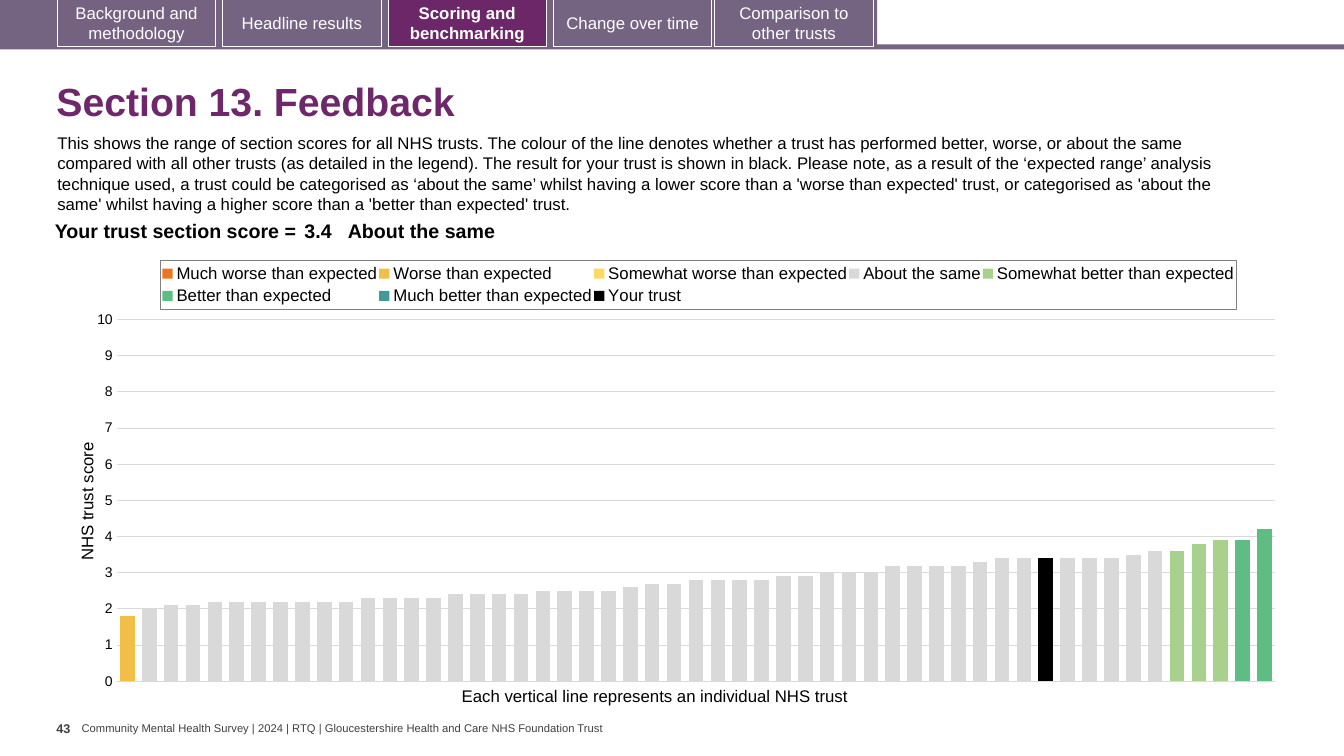
from copy import deepcopy

from lxml import etree
from pptx import Presentation
from pptx import util as u
from pptx.chart.data import CategoryChartData
from pptx.dml.color import RGBColor
from pptx.enum import chart as ch, shapes, text
from pptx.oxml.ns import qn

BAR = RGBColor(0x75, 0x63, 0x82)
TAB = RGBColor(0x74, 0x62, 0x80)
ACTIVE = RGBColor(0x6B, 0x27, 0x68)
PURPLE = RGBColor(0x6D, 0x27, 0x6A)
GREY = RGBColor(0x40, 0x40, 0x40)
GRID = RGBColor(0xD9, 0xD9, 0xD9)
FRAME = RGBColor(0x80, 0x80, 0x80)
WHITE = RGBColor(0xFF, 0xFF, 0xFF)
BLACK = RGBColor(0, 0, 0)

TRUSTS = 53
SAME = [2, 2.1, 2.1] + [2.2] * 7 + [2.3] * 4 + [2.4] * 4 + [2.5] * 4 + [
    2.6, 2.7, 2.7] + [2.8] * 4 + [2.9] * 2 + [3] * 3 + [3.2] * 4 + [
    3.3] + [3.4] * 6 + [3.5, 3.6]
# Series name, number of trusts before it, scores, colour
SERIES = [
    ("Much worse than expected", 0, [], RGBColor(0xE8, 0x77, 0x22)),
    ("Worse than expected", 0, [1.8], RGBColor(0xF1, 0xBE, 0x48)),
    ("Somewhat worse than expected", 0, [], RGBColor(0xFF, 0xD9, 0x66)),
    ("About the same", 1, SAME, GRID),
    ("Somewhat better than expected", 48, [3.6, 3.8, 3.9], RGBColor(0xA9, 0xD1, 0x8E)),
    ("Better than expected", 51, [3.9, 4.2], RGBColor(0x5F, 0xBD, 0x83)),
    ("Much better than expected", 0, [], RGBColor(0x41, 0x99, 0x99)),
    ("Your trust", 42, [3.4], BLACK),
]
INTRO = (
    "This shows the range of section scores for all NHS trusts. The colour of the line "
    "denotes whether a trust has performed better, worse, or about the same compared with "
    "all other trusts (as detailed in the legend). The result for your trust is shown in "
    "black. Please note, as a result of the ‘expected range’ analysis technique used, a "
    "trust could be categorised as ‘about the same’ whilst having a lower score than a "
    "'worse than expected' trust, or categorised as 'about the same' whilst having a higher "
    "score than a 'better than expected' trust.")


def inches(*lengths):
    return [u.Inches(v) for v in lengths]


def style(font, size, color=BLACK, bold=False):
    font.name, font.size, font.bold = "Arial", u.Pt(size), bold
    font.color.rgb = color


def write(tf, words, size, color=BLACK, bold=False, align=text.PP_ALIGN.LEFT):
    p = tf.paragraphs[0]
    p.alignment = align
    r = p.add_run()
    r.text = words
    style(r.font, size, color, bold)
    return p


def margins(frame, side, top):
    frame.margin_left = frame.margin_right = u.Inches(side)
    frame.margin_top = frame.margin_bottom = u.Inches(top)


def label(s, box, words, size, color=BLACK, bold=False, wrap=True, insets=(0.1, 0.05)):
    tf = s.shapes.add_textbox(*inches(*box)).text_frame
    tf.word_wrap = wrap
    margins(tf, *insets)
    write(tf, words, size, color, bold)
    return tf


def rect(s, box, fill=None, line=None):
    sp = s.shapes.add_shape(shapes.MSO_SHAPE.RECTANGLE, *inches(*box))
    sp.shadow.inherit = False
    if fill is None:
        sp.fill.background()
    else:
        sp.fill.solid()
        sp.fill.fore_color.rgb = fill
    if line is None:
        sp.line.fill.background()
    else:
        sp.line.color.rgb = line
        sp.line.width = u.Pt(0.75)
    return sp


def navigation(s, left, width, height):
    rect(s, (0, height - 0.05, 13.33, 0.05), BAR)
    rect(s, (0, 0, 8.7, 0.47), BAR)
    pitch = 1.64
    tabs = [("Background and methodology", TAB), ("Headline results", None),
            ("Scoring and benchmarking", ACTIVE), ("Change over time", BAR),
            ("Comparison to other trusts", BAR)]
    for i, (name, fill) in enumerate(tabs):
        x = left + i * pitch - (0.04 if i == 4 else 0)
        active = fill == ACTIVE
        sp = rect(s, (x, -0.01, width, 0.47), fill, WHITE)
        sp.text_frame.word_wrap = True
        sp.text_frame.vertical_anchor = text.MSO_ANCHOR.MIDDLE
        write(sp.text_frame, name, 12, WHITE, active, text.PP_ALIGN.CENTER)


def heading(s, box):
    title = s.shapes.title
    title.left, title.top, title.width, title.height = inches(*box)
    tf = title.text_frame
    tf.auto_size = text.MSO_AUTO_SIZE.NONE
    tf.vertical_anchor = text.MSO_ANCHOR.MIDDLE
    write(tf, "Section 13. Feedback", 28, PURPLE, True).line_spacing = 0.9


def score_row(s, left, top):
    widths = (2.63, 0.47, 8.59)
    frame = s.shapes.add_table(1, 3, *inches(left, top, sum(widths), 0.31))
    table = frame.table
    table.first_row = table.horz_banding = False
    words = ("Your trust section score =", "3.4", "About the same")
    for i, cell in enumerate(table.rows[0].cells):
        table.columns[i].width = u.Inches(widths[i])
        cell.fill.background()
        margins(cell, 0 if i == 2 else 0.04, 0.04)
        align = text.PP_ALIGN.LEFT if i else text.PP_ALIGN.RIGHT
        write(cell.text_frame, words[i], 14, BLACK, True, align)
        # Hide the cell borders
        for n, edge in enumerate(("a:lnL", "a:lnR", "a:lnT", "a:lnB")):
            ln = etree.Element(qn(edge), w="0")
            etree.SubElement(ln, qn("a:noFill"))
            cell._tc.get_or_add_tcPr().insert(n, ln)


def place(element, index, inner=False, **shares):
    """Give a chart part a manual layout, as shares of the chart."""
    for old in element.findall(qn("c:layout")):
        element.remove(old)
    layout = etree.Element(qn("c:layout"))
    manual = etree.SubElement(layout, qn("c:manualLayout"))
    if inner:
        etree.SubElement(manual, qn("c:layoutTarget"), val="inner")
    for key in ("x", "y"):
        etree.SubElement(manual, qn(f"c:{key}Mode"), val="edge")
    for key, share in shares.items():
        etree.SubElement(manual, qn(f"c:{key}"), val=str(share))
    element.insert(index, layout)


def second_axis(plot_area):
    """Move the last series to its own pair of axes on the right."""
    bars = plot_area.find(qn("c:barChart"))
    cat, val = plot_area.find(qn("c:catAx")), plot_area.find(qn("c:valAx"))
    bars2, cat2, val2 = deepcopy(bars), deepcopy(cat), deepcopy(val)
    bars.remove(bars.findall(qn("c:ser"))[-1])
    for ser in bars2.findall(qn("c:ser"))[:-1]:
        bars2.remove(ser)
    bars.addnext(bars2)
    val.addnext(val2)
    val2.addnext(cat2)
    ids = {cat.find(qn("c:axId")).get("val"): "5001", val.find(qn("c:axId")).get("val"): "5002"}
    for part in (bars2, cat2, val2):
        for ref in part.findall(qn("c:axId")) + part.findall(qn("c:crossAx")):
            ref.set("val", ids[ref.get("val")])
    for tag in ("c:majorGridlines", "c:title"):
        val2.remove(val2.find(qn(tag)))
    val2.find(qn("c:axPos")).set("val", "r")
    val2.find(qn("c:tickLblPos")).set("val", "none")
    val2.find(qn("c:crosses")).set("val", "max")


def score_chart(s, box):
    data = CategoryChartData()
    data.categories = [str(n + 1) for n in range(TRUSTS)]
    for name, before, scores, _ in SERIES:
        data.add_series(name, [None] * before + scores + [None] * (TRUSTS - before - len(scores)))
    chart = s.shapes.add_chart(ch.XL_CHART_TYPE.COLUMN_CLUSTERED, *inches(*box), data).chart
    style(chart.font, 10)
    chart.has_title = False
    plot = chart.plots[0]
    plot.gap_width, plot.overlap, plot.vary_by_categories = 50, 100, False
    for series, (*_, color) in zip(plot.series, SERIES):
        series.format.fill.solid()
        series.format.fill.fore_color.rgb = color
    # Axes
    chart.category_axis.visible = False
    axis = chart.value_axis
    axis.minimum_scale, axis.maximum_scale, axis.major_unit = 0, 10, 1
    axis.major_tick_mark = axis.minor_tick_mark = ch.XL_TICK_MARK.NONE
    axis.tick_label_position = ch.XL_TICK_LABEL_POSITION.NEXT_TO_AXIS
    axis.format.line.fill.background()
    axis.major_gridlines.format.line.color.rgb = GRID
    axis.major_gridlines.format.line.width = u.Pt(0.75)
    style(axis.tick_labels.font, 10)
    write(axis.axis_title.text_frame, "NHS trust score", 12)
    place(axis.axis_title._element, 1, x=0.005, y=0.425)
    # Legend
    chart.has_legend = True
    legend = chart.legend
    legend.position = ch.XL_LEGEND_POSITION.TOP
    legend.include_in_layout = False
    style(legend.font, 12)
    place(legend._element, 1, x=0.076, y=0.025, w=0.878, h=0.11)
    props = etree.Element(qn("c:spPr"))
    line = etree.SubElement(props, qn("a:ln"), w=str(u.Pt(0.75)))
    fill = etree.SubElement(line, qn("a:solidFill"))
    etree.SubElement(fill, qn("a:srgbClr"), val=str(FRAME))
    legend._element.find(qn("c:txPr")).addprevious(props)
    plot_area = chart._chartSpace.chart.plotArea
    place(plot_area, 0, True, x=0.04, y=0.158, w=0.946, h=0.808)
    second_axis(plot_area)


def footer(s, left, top):
    label(s, (left, top, 0.25, 0.4), "43", 9, GREY, True, insets=(0, 0.05))
    tf = label(s, (left + 0.25, top + 0.06, 5.24, 0.13),
               "Community Mental Health Survey | 2024 | RTQ | "
               "Gloucestershire Health and Care NHS Foundation Trust",
               8, GREY, wrap=False, insets=(0, 0))
    tf.vertical_anchor = text.MSO_ANCHOR.MIDDLE


def main():
    prs = Presentation()
    prs.slide_width, prs.slide_height = inches(13.33, 7.5)
    s = prs.slides.add_slide(prs.slide_layouts[5])
    navigation(s, 0.57, 1.57, 0.49)
    heading(s, (0.46, 0.67, 12.49, 0.72))
    label(s, (0.47, 1.27, 12.13, 0.91), INTRO, 12)
    score_chart(s, (0.67, 2.47, 12.15, 4.44))
    label(s, (4.48, 6.75, 4.11, 0.3), "Each vertical line represents an individual NHS trust",
          12, wrap=False)
    score_row(s, 0.35, 2.15)
    footer(s, 0.56, 7.1)
    prs.save("out.pptx")


if __name__ == "__main__":
    main()
